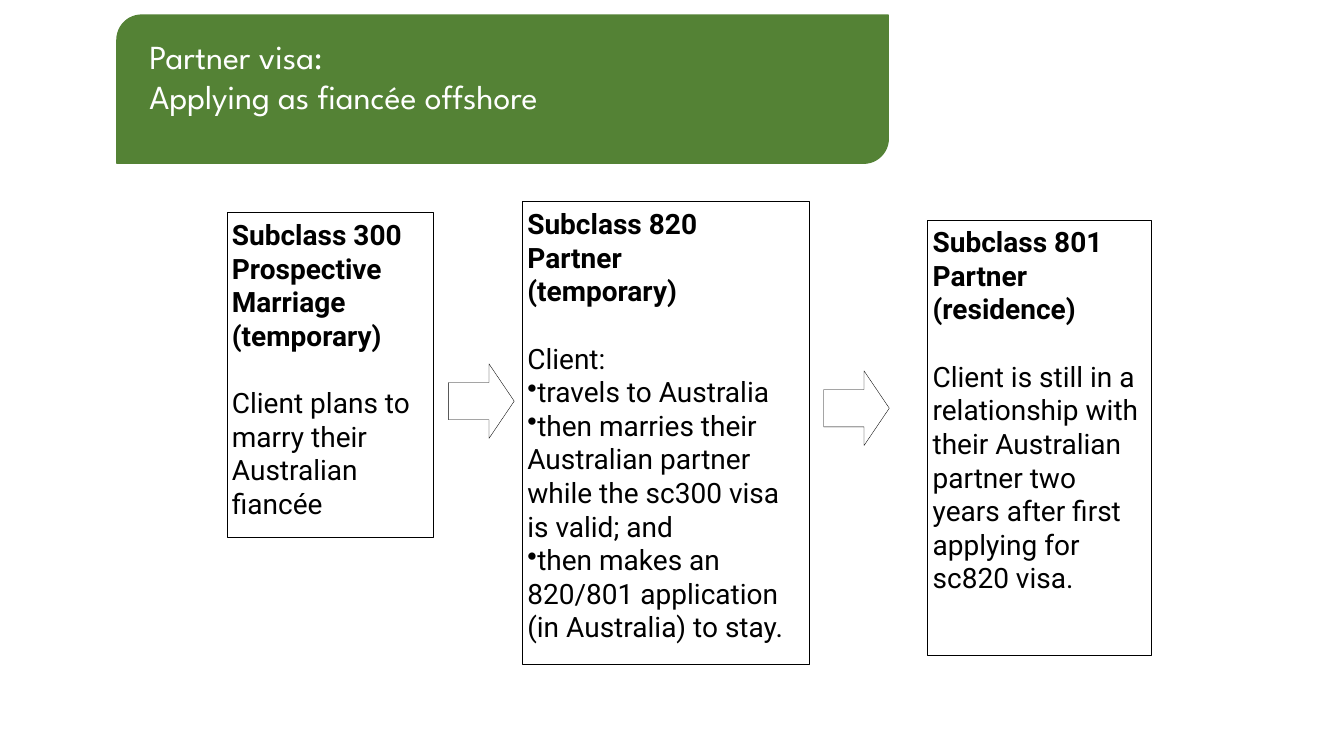
from lxml.etree import SubElement
from pptx import Presentation
from pptx.dml.color import RGBColor
from pptx.enum.shapes import MSO_SHAPE as SHAPE
from pptx.enum.text import MSO_ANCHOR as ANCHOR, PP_ALIGN as ALIGN
from pptx.oxml.ns import qn
from pptx.util import Inches, Pt

COLORS = {"green": "548235", "white": "FFFFFF", "black": "000000"}
BODY_FONT = "Roboto"
TITLE_FONT = "League Spartan"

STAGES = [
    {
        "box": (2.25, 2.11, 2.05, 3.22),
        "heading": ["Subclass 300\vProspective Marriage", "(temporary)"],
        "body": "Client plans to marry their Australian fiancée",
        "bullets": [],
    },
    {
        "box": (5.18, 2, 2.85, 4.59),
        "heading": ["Subclass 820\vPartner", "(temporary)"],
        "body": "Client:",
        "bullets": [
            "travels to Australia",
            "then marries their Australian partner while the sc300 visa is valid; and",
            "then makes an 820/801 application (in Australia) to stay.",
        ],
    },
    {
        "box": (9.2, 2.18, 2.22, 4.32),
        "heading": ["Subclass 801 Partner", "(residence)"],
        "body": "Client is still in a relationship with their Australian partner "
                "two years after first applying for sc820 visa.",
        "bullets": [],
    },
]
ARROWS = [(4.45, 3.61, 0.65, 0.74), (8.17, 3.68, 0.65, 0.74)]


def color(name):
    """Return the named colour."""
    return RGBColor.from_string(COLORS[name])


def add_panel(slide, kind, box, fill="white", line="black", width=0.25):
    """Draw a filled, outlined preset shape in the given box."""
    shape = slide.shapes.add_shape(kind, *(Inches(length) for length in box))
    shape.shadow.inherit = False
    shape.fill.solid()
    shape.fill.fore_color.rgb = color(fill)
    shape.line.color.rgb = color(line)
    shape.line.width = Pt(width)
    return shape


def prepare_frame(shape, left=0.05, top=0.05):
    """Set wrapping, margins and top anchoring, and return the text frame."""
    frame = shape.text_frame
    frame.word_wrap = True
    frame.vertical_anchor = ANCHOR.TOP
    frame.margin_left, frame.margin_top = Inches(left), Inches(top)
    frame.margin_right = frame.margin_bottom = Inches(0.05)
    return frame


def add_text(frame, text, size=20, font=BODY_FONT, fill="black",
             bold=False, before=0, bullet=False):
    """Add one formatted paragraph to a text frame."""
    paragraph = frame.paragraphs[0]
    if paragraph.runs:
        paragraph = frame.add_paragraph()
    paragraph.text = text
    paragraph.alignment = ALIGN.LEFT
    paragraph.space_before = Pt(before)
    for run in paragraph.runs:
        run.font.name = font
        run.font.size = Pt(size)
        run.font.bold = bold
        run.font.color.rgb = color(fill)
    if bullet:
        properties = paragraph._p.get_or_add_pPr()
        SubElement(properties, qn("a:buChar")).set("char", "•")


def add_title(slide, box, lines):
    """Draw the green title banner."""
    banner = add_panel(slide, SHAPE.ROUND_2_DIAG_RECTANGLE, box, "green", "green", 1)
    frame = prepare_frame(banner, left=0.25, top=0.13)
    for line in lines:
        add_text(frame, line, size=24, font=TITLE_FONT, fill="white")


def add_stage(slide, box, heading, body, bullets):
    """Draw one visa stage with its heading, body and bullets."""
    frame = prepare_frame(add_panel(slide, SHAPE.RECTANGLE, box))
    for line in heading:
        add_text(frame, line, bold=True)
    add_text(frame, body, before=24)
    for bullet in bullets:
        add_text(frame, bullet, bullet=True)


def add_arrow(slide, box):
    """Draw a block arrow between two stages."""
    arrow = add_panel(slide, SHAPE.RIGHT_ARROW, box)
    arrow.adjustments[1] = 0.385


def main():
    """Build and save the slide."""
    presentation = Presentation()
    presentation.slide_width = Inches(13.33)
    presentation.slide_height = Inches(7.5)
    slide = presentation.slides.add_slide(presentation.slide_layouts[6])
    add_title(slide, (1.16, 0.15, 7.65, 1.47),
              ["Partner visa:", "Applying as fiancée offshore"])
    for stage in STAGES:
        add_stage(slide, **stage)
    for box in ARROWS:
        add_arrow(slide, box)
    presentation.save("out.pptx")


if __name__ == "__main__":
    main()
